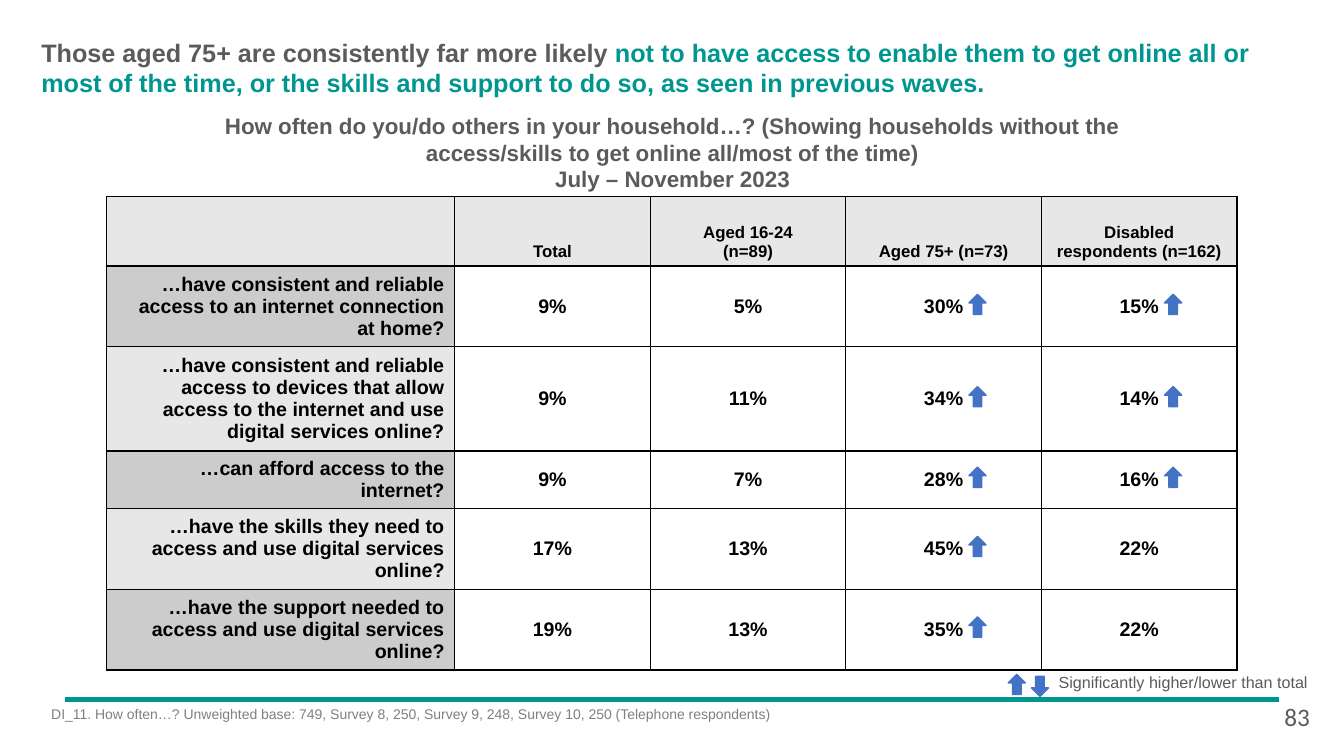
from lxml import etree
from pptx import Presentation
from pptx.dml.color import RGBColor
from pptx.enum.shapes import MSO_CONNECTOR, MSO_SHAPE
from pptx.enum.text import MSO_ANCHOR, PP_ALIGN
from pptx.oxml.ns import qn
from pptx.util import Inches, Pt

LEFT, CENTER, RIGHT = PP_ALIGN.LEFT, PP_ALIGN.CENTER, PP_ALIGN.RIGHT
TOP, MIDDLE, BOTTOM = MSO_ANCHOR.TOP, MSO_ANCHOR.MIDDLE, MSO_ANCHOR.BOTTOM
DOWN_ARROW, STRAIGHT = MSO_SHAPE.DOWN_ARROW, MSO_CONNECTOR.STRAIGHT
TITLE_ONLY = 5

TEAL, GREY, NOTE_GREY, BLACK = "009690", "5C5B5A", "808080", "000000"
BLUE, LIGHT_FILL, DARK_FILL, WHITE = "4472C4", "E7E7E7", "CCCCCC", "FFFFFF"
ARROW_WIDTH, ARROW_HEIGHT = 0.17, 0.2

COLUMN_WIDTHS = [3.45] + [1.94] * 4
ROW_HEIGHTS = [0.69, 0.8, 1.03, 0.57, 0.8, 0.8]
HEADERS = ["", "Total", "Aged 16-24\n(n=89)", "Aged 75+ (n=73)",
           "Disabled respondents (n=162)"]
QUESTIONS = [
    ("…have consistent and reliable access to an internet connection at home?",
     "9%", "5%", "30%", "15%"),
    ("…have consistent and reliable access to devices that allow access to the "
     "internet and use digital services online?", "9%", "11%", "34%", "14%"),
    ("…can afford access to the internet?", "9%", "7%", "28%", "16%"),
    ("…have the skills they need to access and use digital services online?",
     "17%", "13%", "45%", "22%"),
    ("…have the support needed to access and use digital services online?",
     "19%", "13%", "35%", "22%"),
]
# Table column -> rows that are significantly higher than the total
HIGHER_ROWS = {3: [1, 2, 3, 4, 5], 4: [1, 2, 3]}


def color(hex_string):
    return RGBColor.from_string(hex_string)


def write(frame, text, size=12, ink=BLACK, bold=False, align=LEFT,
          anchor=TOP, font="Arial", wrap=True):
    """Write text, one paragraph a line; text may be a list of (words, ink) runs."""
    frame.word_wrap = wrap
    frame.vertical_anchor = anchor
    lines = [[(line, ink)] for line in text.split("\n")] if isinstance(text, str) else [text]
    for index, runs in enumerate(lines):
        paragraph = frame.add_paragraph() if index else frame.paragraphs[0]
        paragraph.alignment = align
        for words, run_ink in runs:
            run = paragraph.add_run()
            run.text = words
            run.font.name, run.font.size, run.font.bold = font, Pt(size), bold
            run.font.color.rgb = color(run_ink)


def add_text(shapes, box, text, **text_format):
    shape = shapes.add_textbox(*map(Inches, box))
    write(shape.text_frame, text, **text_format)


def add_arrow(shapes, left, top, up=True):
    arrow = shapes.add_shape(DOWN_ARROW, *map(Inches, (left, top, ARROW_WIDTH, ARROW_HEIGHT)))
    arrow.rotation = 180 if up else 0
    arrow.shadow.inherit = False
    arrow.fill.solid()
    arrow.fill.fore_color.rgb = color(BLUE)
    arrow.line.color.rgb = color(BLUE)
    arrow.line.width = Pt(1)


def format_cell(cell, fill):
    """Fill a cell and give it a thin black border on all sides."""
    properties = cell._tc.get_or_add_tcPr()
    for side in ("a:lnL", "a:lnR", "a:lnT", "a:lnB"):
        border = etree.SubElement(properties, qn(side), w=str(Pt(1)))
        solid = etree.SubElement(border, qn("a:solidFill"))
        etree.SubElement(solid, qn("a:srgbClr"), val=BLACK)
    cell.fill.solid()
    cell.fill.fore_color.rgb = color(fill)


def add_heading(slide, box):
    left, top, width, height = box
    title = slide.shapes.title
    title.left, title.top, title.width, title.height = map(Inches, box)
    frame = title.text_frame
    frame.margin_left = frame.margin_right = frame.margin_top = frame.margin_bottom = 0
    write(frame, [
        ("Those aged 75+ are consistently far more likely ", GREY),
        ("not to have access to enable them to get online all or most of the time, "
         "or the skills and support to do so, as seen in previous waves.", TEAL),
    ], size=18, bold=True)
    add_text(slide.shapes, (left + 1.04, top + 0.69, width - 1.85, 0.91),
             "How often do you/do others in your household…? (Showing households "
             "without the access/skills to get online all/most of the time)\n"
             "July – November 2023", size=16, ink=GREY, bold=True, align=CENTER)


def add_results(slide, left, top):
    rows = [HEADERS] + QUESTIONS
    table = slide.shapes.add_table(
        len(rows), len(HEADERS), Inches(left), Inches(top),
        Inches(sum(COLUMN_WIDTHS)), Inches(sum(ROW_HEIGHTS))).table
    for column, width in zip(table.columns, COLUMN_WIDTHS):
        column.width = Inches(width)
    for row, height in zip(table.rows, ROW_HEIGHTS):
        row.height = Inches(height)

    for row_index, values in enumerate(rows):
        header = row_index == 0
        for column_index, value in enumerate(values):
            cell = table.cell(row_index, column_index)
            label = column_index == 0
            shade = DARK_FILL if row_index % 2 else LIGHT_FILL
            format_cell(cell, shade if header or label else WHITE)
            write(cell.text_frame, value, size=12 if header else 14, bold=True,
                  align=RIGHT if label else CENTER)
            cell.vertical_anchor = BOTTOM if header else MIDDLE

    # Arrows sit right of the figure, at mid-row
    for column_index, marked_rows in HIGHER_ROWS.items():
        arrow_left = left + sum(COLUMN_WIDTHS[:column_index]) + 1.22
        for row_index in marked_rows:
            middle = top + sum(ROW_HEIGHTS[:row_index]) + ROW_HEIGHTS[row_index] / 2
            add_arrow(slide.shapes, arrow_left, middle - ARROW_HEIGHT / 2 - 0.02)


def add_legend(slide, left, top):
    shapes = slide.shapes.add_group_shape().shapes
    add_arrow(shapes, left, top + 0.07)
    add_arrow(shapes, left + 0.23, top + 0.09, up=False)
    add_text(shapes, (left + 0.4, top, 2.69, 0.29),
             "Significantly higher/lower than total", size=11.5, ink=GREY, wrap=False)


def add_footer(slide, left, right, top):
    rule = slide.shapes.add_connector(STRAIGHT, *map(Inches, (left, top, right, top)))
    rule.line.color.rgb = color(TEAL)
    rule.line.width = Pt(3)
    etree.SubElement(rule._element.spPr, qn("a:effectLst"))
    add_text(slide.shapes, (left - 0.23, top + 0.01, 11.98, 0.4),
             "DI_11. How often…? Unweighted base: 749, Survey 8, 250, Survey 9, 248, "
             "Survey 10, 250 (Telephone respondents)", size=10, ink=NOTE_GREY)
    add_text(slide.shapes, (right - 0.05, top - 0.03, 0.62, 0.4), "83",
             size=18, ink=GREY, font="Calibri")


def main():
    presentation = Presentation()
    presentation.slide_width, presentation.slide_height = Inches(13.33), Inches(7.5)
    slide = presentation.slides.add_slide(presentation.slide_layouts[TITLE_ONLY])
    add_heading(slide, (0.41, 0.37, 12.29, 0.61))
    add_results(slide, 1.06, 1.95)
    add_footer(slide, 0.64, 12.69, 6.94)
    add_legend(slide, 10, 6.62)
    presentation.save("out.pptx")


if __name__ == "__main__":
    main()
